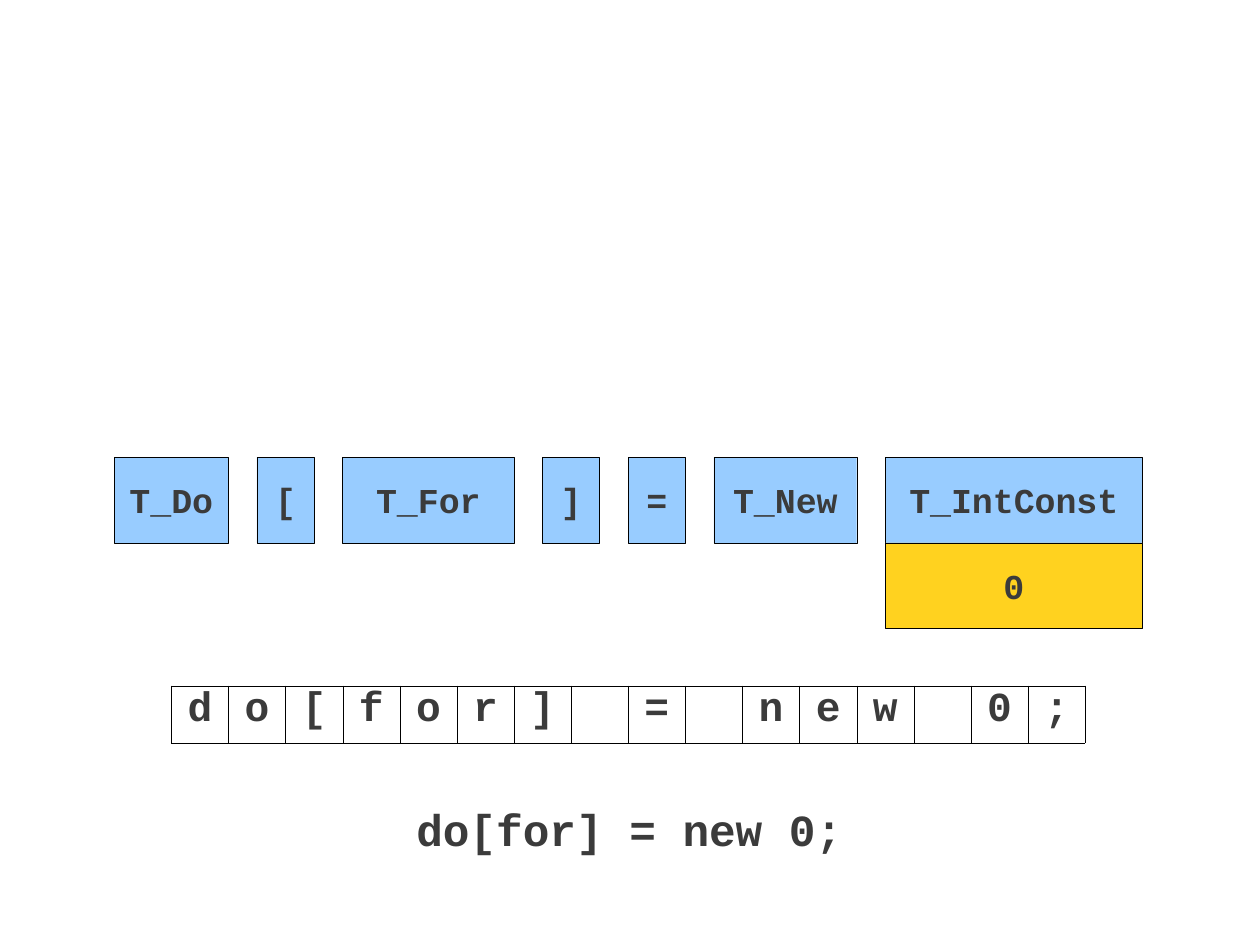
from dataclasses import dataclass

import pptx
import pptx.dml.color
import pptx.enum.shapes
import pptx.enum.text
import pptx.oxml
import pptx.oxml.ns
import pptx.shapes.autoshape
import pptx.slide
import pptx.table
import pptx.text.text
import pptx.util

EMU_PER_PX = 9144
SKY = pptx.dml.color.RGBColor(0x98, 0xCC, 0xFF)
GOLD = pptx.dml.color.RGBColor(0xFF, 0xD2, 0x1F)
BLACK = pptx.dml.color.RGBColor(0, 0, 0)
CHARCOAL = pptx.dml.color.RGBColor(0x3B, 0x3B, 0x3B)
FONT = "Courier New"
RULE = pptx.util.Pt(0.25)

STATEMENT = "do[for] = new 0;"
CELL = 50
TOKEN_LEFT, TOKEN_TOP, TOKEN_HEIGHT, TOKEN_GAP = 100, 400, 75, 25


@dataclass(frozen=True)
class Token:
    name: str
    width: int
    value: str = ""


TOKENS = [
    Token("T_Do", 100),
    Token("[", 50),
    Token("T_For", 150),
    Token("]", 50),
    Token("=", 50),
    Token("T_New", 125),
    Token("T_IntConst", 225, "0"),
]


def px(length: int) -> pptx.util.Emu:
    return pptx.util.Emu(length * EMU_PER_PX)


def write_code(frame: pptx.text.text.TextFrame, code: str, size: int) -> None:
    """Put one centred line of bold code in a frame without margins."""
    frame.margin_left = frame.margin_right = frame.margin_top = frame.margin_bottom = 0
    frame.vertical_anchor = pptx.enum.text.MSO_ANCHOR.MIDDLE
    write_line(frame.paragraphs[0], code, size)


def write_line(line: pptx.text.text._Paragraph, code: str, size: int) -> None:
    line.alignment = pptx.enum.text.PP_ALIGN.CENTER
    run = line.add_run()
    run.text = code
    run.font.name = FONT
    run.font.size = pptx.util.Pt(size)
    run.font.bold = True
    run.font.color.rgb = CHARCOAL


def draw_box(slide: pptx.slide.Slide, left: int, top: int, width: int,
             code: str, fill: pptx.dml.color.RGBColor) -> None:
    box = slide.shapes.add_shape(pptx.enum.shapes.MSO_SHAPE.RECTANGLE,
                                 px(left), px(top), px(width), px(TOKEN_HEIGHT))
    box.shadow.inherit = False
    box.fill.solid()
    box.fill.fore_color.rgb = fill
    box.line.color.rgb = BLACK
    box.line.width = RULE
    write_code(box.text_frame, code, 22)


def draw_tokens(slide: pptx.slide.Slide) -> None:
    left = TOKEN_LEFT
    for token in TOKENS:
        draw_box(slide, left, TOKEN_TOP, token.width, token.name, SKY)
        if token.value:
            draw_box(slide, left, TOKEN_TOP + TOKEN_HEIGHT, token.width, token.value, GOLD)
        left += token.width + TOKEN_GAP


def add_borders(cell: pptx.table._Cell) -> None:
    properties = cell._tc.get_or_add_tcPr()
    for position, side in enumerate(("lnL", "lnR", "lnT", "lnB")):
        properties.insert(position, pptx.oxml.parse_xml(
            f'<a:{side} {pptx.oxml.ns.nsdecls("a")} w="{int(RULE)}">'
            f'<a:solidFill><a:srgbClr val="{BLACK}"/></a:solidFill></a:{side}>'))


def draw_characters(slide: pptx.slide.Slide, left: int, top: int) -> None:
    """Lay out the statement with one character in each table cell."""
    count = len(STATEMENT)
    characters = slide.shapes.add_table(1, count, px(left), px(top),
                                        px(CELL * count), px(CELL)).table
    characters.first_row = characters.horz_banding = False
    for column, character in enumerate(STATEMENT):
        characters.columns[column].width = px(CELL)
        cell = characters.cell(0, column)
        cell.margin_left = cell.margin_right = cell.margin_top = cell.margin_bottom = 0
        cell.fill.background()
        add_borders(cell)
        if character != " ":
            line = cell.text_frame.paragraphs[0]
            line.line_spacing = pptx.util.Pt(30.2)
            write_line(line, character, 26)


def draw_statement(slide: pptx.slide.Slide) -> None:
    statement = slide.shapes.add_textbox(px(351), px(702), px(400), px(47))
    statement.text_frame.word_wrap = True
    write_code(statement.text_frame, STATEMENT, 28)


def main() -> None:
    presentation = pptx.Presentation()
    presentation.slide_width, presentation.slide_height = px(1103), px(826)
    slide = presentation.slides.add_slide(presentation.slide_layouts[6])
    draw_tokens(slide)
    draw_characters(slide, 150, 600)
    draw_statement(slide)
    presentation.save("out.pptx")


if __name__ == "__main__":
    main()
